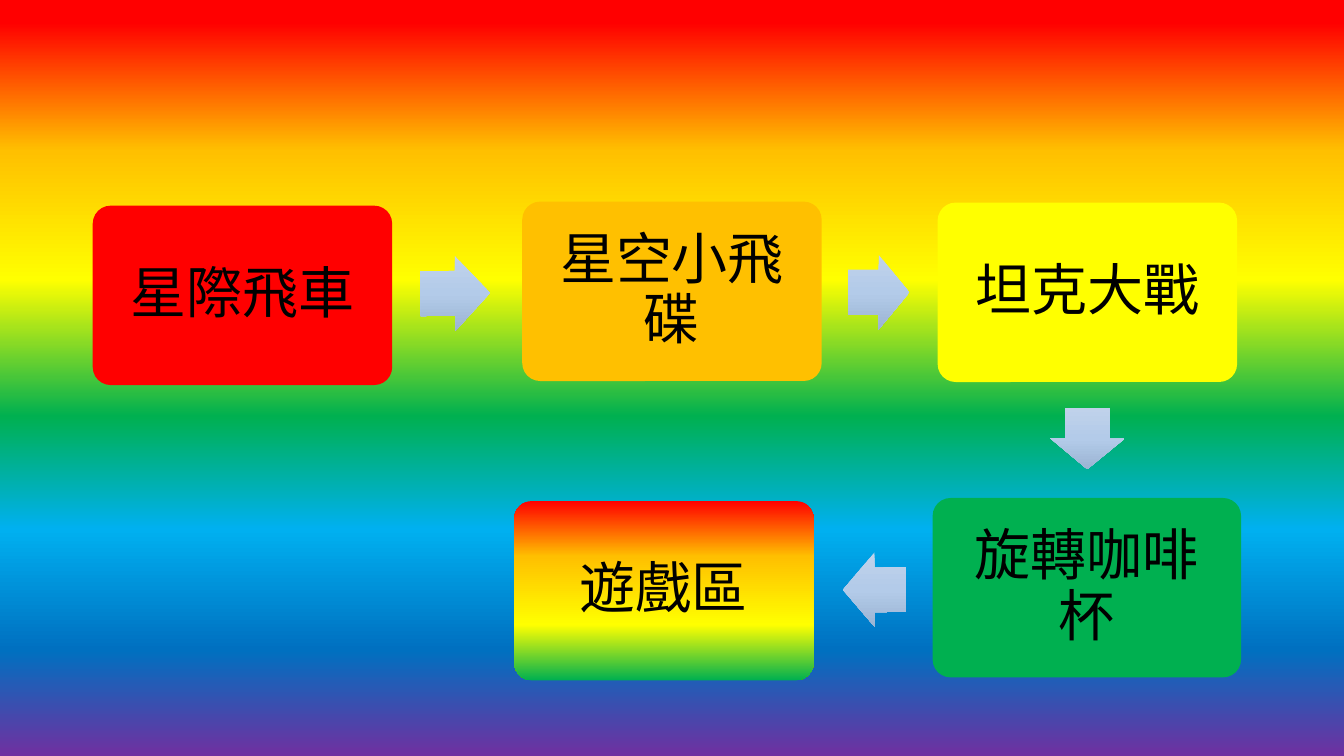
"""Build a rainbow slide with a route through five amusement rides."""
from dataclasses import dataclass

from lxml.etree import SubElement
from pptx import Presentation
from pptx.dml.color import RGBColor
from pptx.dml.fill import FillFormat
from pptx.enum.shapes import MSO_SHAPE
from pptx.enum.text import MSO_ANCHOR, PP_ALIGN
from pptx.oxml.ns import qn
from pptx.oxml.xmlchemy import BaseOxmlElement
from pptx.shapes.autoshape import Shape
from pptx.slide import Slide
from pptx.util import Inches, Pt

Stops = list[tuple[int, str]]

RAINBOW: Stops = [(3, "FF0000"), (20, "FFC000"), (37, "FFFF00"), (55, "00B050"),
                  (70, "00B0F0"), (86, "0070C0"), (100, "7030A0")]
ARROW_BLUE: Stops = [(0, "C0D2EB"), (50, "B3CBE9"), (100, "9BB4D3")]
FOUR_COLOURS: Stops = [(0, "FF0000"), (31, "FFC000"), (69, "FFFF00"), (100, "00B050")]
RIDE_HEIGHT = 1.78
ARROW_HEIGHT = 0.74
INSET = 0.22


@dataclass
class Ride:
    name: str
    left: float
    top: float
    colour: str | Stops
    width: float = 2.97


@dataclass
class Arrow:
    left: float
    top: float
    width: float
    rotation: float


RIDES = [
    Ride("星際飛車", 0.92, 2.04, "FF0000"),
    Ride("星空小飛碟", 5.18, 2, "FFC000"),
    Ride("坦克大戰", 9.3, 2.01, "FFFF00"),
    Ride("旋轉咖啡杯", 9.25, 4.94, "00B050", 3.06),
    Ride("遊戲區", 5.1, 4.97, FOUR_COLOURS),
]
ARROWS = [
    Arrow(4.17, 2.54, 0.69, 359.4),
    Arrow(8.41, 2.53, 0.61, 0.2),
    Arrow(10.48, 3.98, 0.61, 90.3),
    Arrow(8.36, 5.48, 0.63, 179.7),
]


def colour_of(value: str) -> RGBColor:
    return RGBColor.from_string(value)


def paint(fill: FillFormat, owner: BaseOxmlElement, colour: str | Stops) -> None:
    if isinstance(colour, str):
        fill.solid()
        fill.fore_color.rgb = colour_of(colour)
        return
    fill.gradient()
    fill.gradient_angle = 270
    gradient = next(owner.iter(qn("a:gradFill")))
    gradient.set("rotWithShape", "0")
    stop_list = gradient.find(qn("a:gsLst"))
    for old_stop in list(stop_list):
        stop_list.remove(old_stop)
    for percent, value in colour:
        stop = SubElement(stop_list, qn("a:gs"), pos=str(percent * 1000))
        SubElement(stop, qn("a:srgbClr"), val=value)


def add_plain_shape(page: Slide, kind: MSO_SHAPE, left: float, top: float,
                    width: float, height: float, colour: str | Stops) -> Shape:
    shape = page.shapes.add_shape(kind, Inches(left), Inches(top), Inches(width), Inches(height))
    shape.shadow.inherit = False
    shape.line.fill.background()
    paint(shape.fill, shape._element, colour)
    return shape


def add_ride(page: Slide, ride: Ride) -> None:
    box = add_plain_shape(page, MSO_SHAPE.ROUNDED_RECTANGLE, ride.left, ride.top,
                          ride.width, RIDE_HEIGHT, ride.colour)
    box.adjustments[0] = 0.1
    frame = box.text_frame
    frame.text = ride.name
    frame.word_wrap = True
    frame.vertical_anchor = MSO_ANCHOR.MIDDLE
    frame.margin_left = frame.margin_right = Inches(INSET)
    frame.margin_top = frame.margin_bottom = Inches(INSET)
    para = frame.paragraphs[0]
    para.alignment = PP_ALIGN.CENTER
    para.line_spacing = 0.9
    span = para.runs[0]
    span.font.name = "Calibri"
    span.font.size = Pt(40)
    span.font.color.rgb = colour_of("000000")


def add_arrow(page: Slide, arrow: Arrow) -> None:
    shape = add_plain_shape(page, MSO_SHAPE.RIGHT_ARROW, arrow.left, arrow.top,
                            arrow.width, ARROW_HEIGHT, ARROW_BLUE)
    shape.adjustments[0] = 0.6
    shape.adjustments[1] = 0.5
    shape.rotation = arrow.rotation


def main() -> None:
    deck = Presentation()
    deck.slide_width = Inches(13.33)
    deck.slide_height = Inches(7.5)
    page = deck.slides.add_slide(deck.slide_layouts[6])
    paint(page.background.fill, page._element, RAINBOW)
    for ride in RIDES:
        add_ride(page, ride)
    for arrow in ARROWS:
        add_arrow(page, arrow)
    deck.save("out.pptx")


if __name__ == "__main__":
    main()
